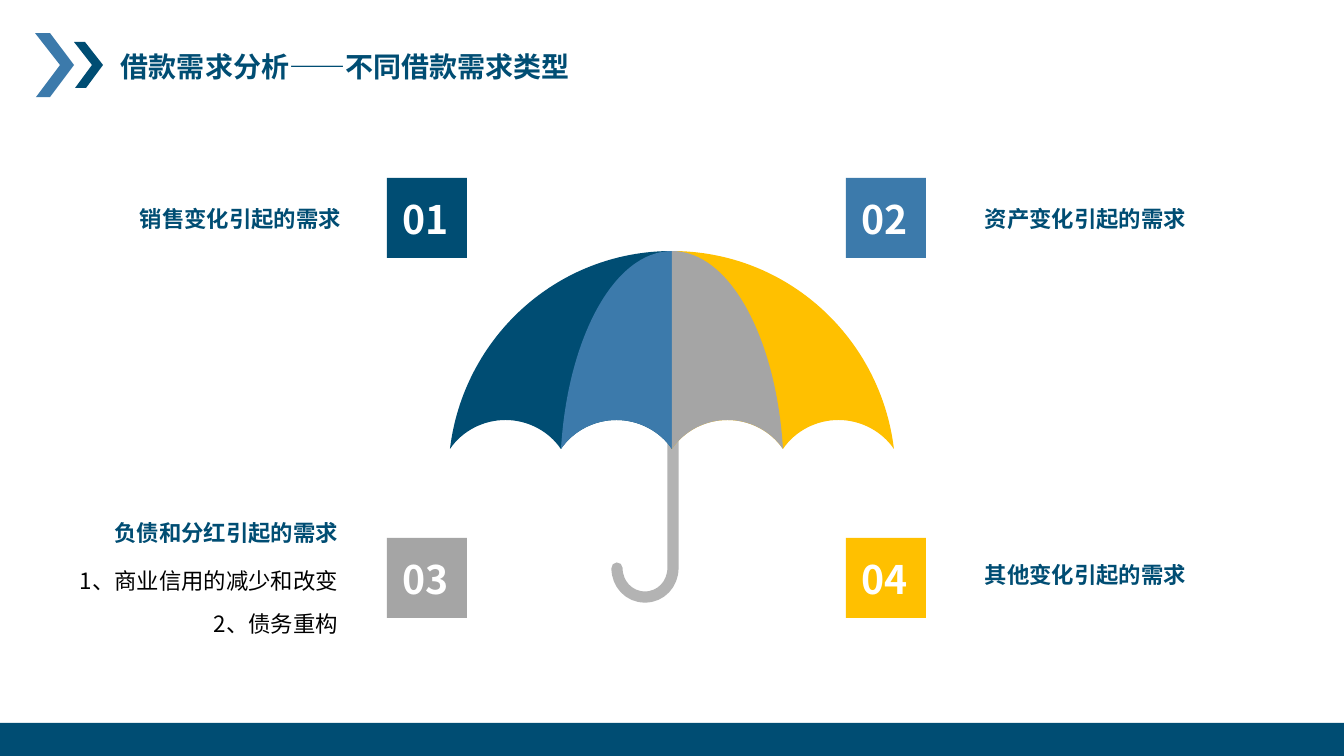
import pptx
import pptx.util
import pptx.dml.color
import pptx.enum.shapes
import pptx.enum.text
import pptx.oxml.ns
from lxml import etree

Pt = pptx.util.Pt
rgb = pptx.dml.color.RGBColor.from_string
qn = pptx.oxml.ns.qn
RECT = pptx.enum.shapes.MSO_SHAPE.RECTANGLE
ALIGN = pptx.enum.text.PP_ALIGN
ANCHOR = pptx.enum.text.MSO_ANCHOR
WIDE, HIGH = 1344, 756
SCALE = 12192000 / WIDE
NAVY, BLUE, GREY, GOLD = "004D73", "3C7AAB", "A5A5A5", "FFC000"
NOTO, LATO = "Noto Sans CJK SC", "Lato"


def px(*nums):
    return [round(n * SCALE) for n in nums]


def bend(form, count):
    """Turn the first count triples of line segments into cubic curves."""
    lines = list(form._element.iter(qn("a:lnTo")))
    for k in range(count):
        first, *rest = lines[3 * k:3 * k + 3]
        cubic = etree.Element(qn("a:cubicBezTo"))
        first.addprevious(cubic)
        for line in [first, *rest]:
            cubic.append(line[0])
            line.getparent().remove(line)


deck = pptx.Presentation()
deck.slide_width, deck.slide_height = px(WIDE, HIGH)
slide = deck.slides.add_slide(deck.slide_layouts[6])
shapes = slide.shapes

# Title chevrons: color, number of curves, points
outlines = [
    (BLUE, 0, [(35, 33), (50, 33), (74, 65), (50, 97), (36, 97), (60, 65)]),
    (NAVY, 0, [(74, 42), (85, 42), (103, 65), (86, 88), (75, 88), (92, 65)]),
]

# Umbrella handle: two curves for the hook and a straight shaft
outlines.append((None, 2, [(617, 568), (617, 584), (629, 597), (645, 597),
                           (661, 597), (673, 584), (673, 568), (673, 341)]))

# Umbrella panels: wide ones behind, narrow ones in front
mid, top, rim, step = 672, 251, 449, 111
scallop = [(0.11, 431), (0.3, 420), (0.5, 420), (0.7, 420), (0.89, 431), (1, rim)]
for color, side, count in [(GOLD, 1, 2), (NAVY, -1, 2), (BLUE, -1, 1), (GREY, 1, 1)]:
    span = side * step * count
    pts = [(mid, top), (mid + 0.52 * span, top), (mid + 0.94 * span, 338), (mid + span, rim)]
    for k in range(count, 0, -1):
        pts += [(mid + side * step * (k - part), y) for part, y in scallop]
    outlines.append((color, 1 + 2 * count, pts))

# Draw all outlines
for color, curves, pts in outlines:
    pts = [px(*p) for p in pts]
    pen = shapes.build_freeform(*pts[0], scale=1.0)
    pen.add_line_segments(pts[1:], close=color is not None)
    form = pen.convert_to_shape()
    bend(form, curves)
    form.shadow.inherit = False
    if color:
        form.fill.solid()
        form.fill.fore_color.rgb = rgb(color)
        form.line.fill.background()
    else:
        form.fill.background()
        form.line.color.rgb = rgb("B3B3B3")
        form.line.width = Pt(8)
        form.line._get_or_add_ln().set("cap", "rnd")

# Footer bar and number squares
blocks = [(0, 723, WIDE, 33, NAVY)]
texts = []
for i, color in enumerate([NAVY, BLUE, GREY, GOLD]):
    x, y = 387 + 459 * (i % 2), 178 + 360 * (i // 2)
    blocks.append((x, y, 80, 80, color))
    texts.append(((x + 6, y + 10, 65, 53), [f"0{i + 1}"], 28, NOTO, "FFFFFF", ALIGN.CENTER, 1.2))
for *box, color in blocks:
    block = shapes.add_shape(RECT, *px(*box))
    block.shadow.inherit = False
    block.fill.solid()
    block.fill.fore_color.rgb = rgb(color)
    block.line.fill.background()

# Headings, notes and title
notes = ["1、商业信用的减少和改变", "2、债务重构"]
texts += [
    ((128, 194, 213, 45), ["销售变化引起的需求"], 16, LATO, NAVY, ALIGN.RIGHT, None),
    ((985, 194, 229, 45), ["资产变化引起的需求"], 16, LATO, NAVY, ALIGN.LEFT, None),
    ((79, 508, 259, 45), ["负债和分红引起的需求"], 16, LATO, NAVY, ALIGN.RIGHT, None),
    ((985, 545, 252, 55), ["其他变化引起的需求"], 16, LATO, NAVY, ALIGN.LEFT, 1.2),
    ((48, 562, 290, 66), notes, 16, NOTO, "000000", ALIGN.RIGHT, 1.2),
    ((111, 45, 498, 44), ["借款需求分析——不同借款需求类型"], 20, NOTO, NAVY, ALIGN.LEFT, None),
]
for box, lines, size, face, color, align, gap in texts:
    frame = shapes.add_textbox(*px(*box)).text_frame
    frame.word_wrap = True
    if size != 20:
        frame.margin_left = frame.margin_right = 0
        frame.margin_top = frame.margin_bottom = 0 if lines is notes else px(11)[0]
    if size == 28:
        frame.vertical_anchor = ANCHOR.MIDDLE
    frame.text = "\n".join(lines)
    for para in frame.paragraphs:
        para.alignment = align
        para.line_spacing = gap
        if lines is notes:
            para.space_before = Pt(7.4)
        for run in para.runs:
            font = run.font
            font.size, font.name = Pt(size), face
            font.bold = lines is not notes
            font.color.rgb = rgb(color)
            east = etree.SubElement(font._element, qn("a:ea"))
            east.set("typeface", NOTO)

deck.save("out.pptx")
